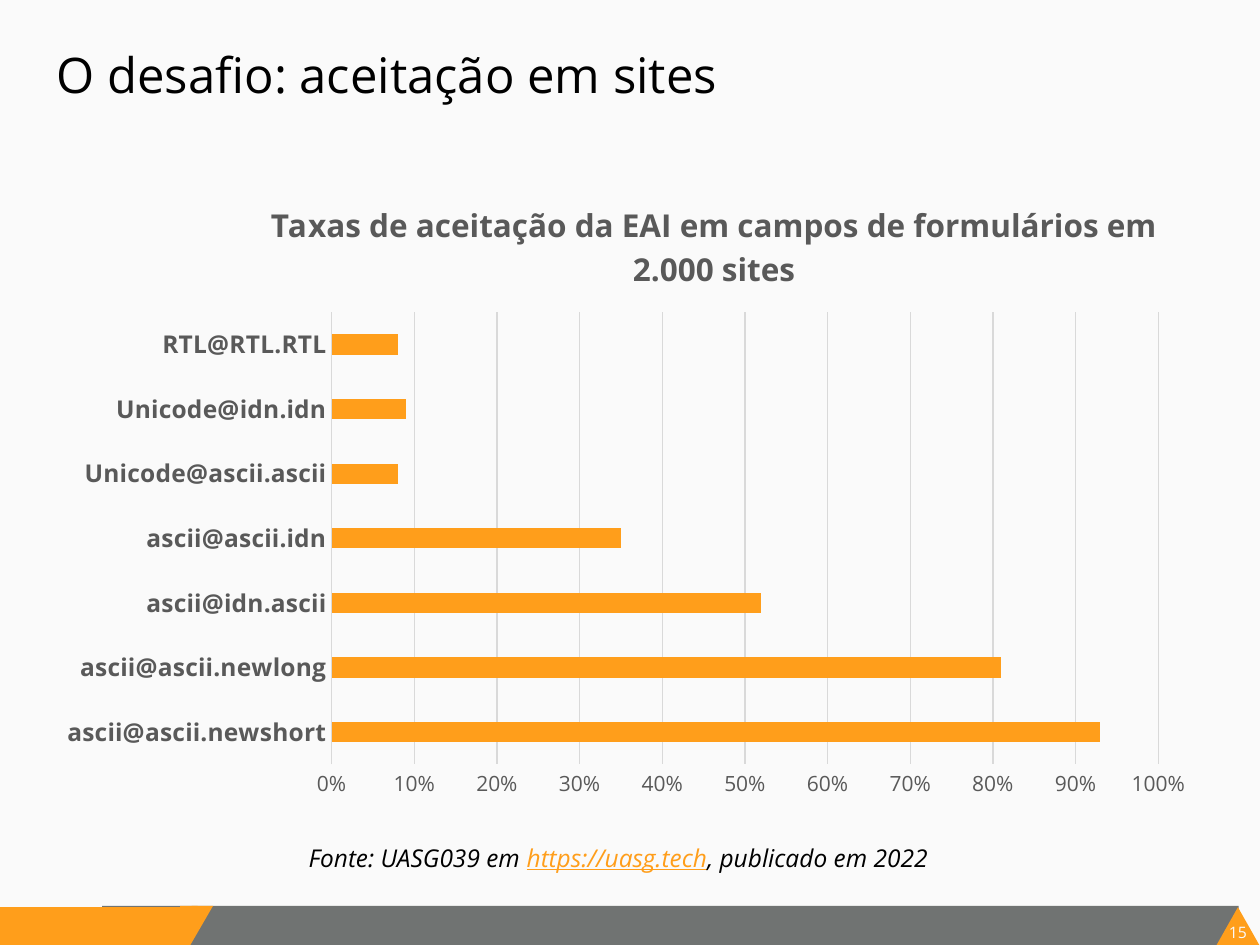
from lxml.etree import SubElement
from pptx import Presentation
from pptx.chart.data import CategoryChartData
from pptx.dml.color import RGBColor
from pptx.enum.chart import XL_CHART_TYPE, XL_TICK_MARK
from pptx.enum.shapes import MSO_SHAPE
from pptx.enum.text import MSO_ANCHOR, PP_ALIGN
from pptx.oxml.ns import qn
from pptx.util import Inches, Pt

FONT = "Open Sans"
ORANGE, GRAY, PALE = "FF9E1B", "707372", "FAFAFA"
BLACK, LABEL, GRID = "000000", "595959", "D9D9D9"

TITLE = "O desafio: aceitação em sites"
CHART_TITLE = "Taxas de aceitação da EAI em campos de formulários em 2.000 sites"
RATES = [
    ("ascii@ascii.newshort", 0.93),
    ("ascii@ascii.newlong", 0.81),
    ("ascii@idn.ascii", 0.52),
    ("ascii@ascii.idn", 0.35),
    ("Unicode@ascii.ascii", 0.08),
    ("Unicode@idn.idn", 0.09),
    ("RTL@RTL.RTL", 0.08),
]
SOURCE = [
    ("Fonte: UASG039 em ", BLACK, False),
    ("https://uasg.tech", ORANGE, True),
    (", publicado em 2022", BLACK, False),
]
FOOTER = [
    (MSO_SHAPE.RECTANGLE, (0.81, 7.19, 9.02, 0.31), GRAY, 0, None),
    (MSO_SHAPE.RECTANGLE, (0, 7.2, 1.5, 0.31), ORANGE, 0, None),
    (MSO_SHAPE.ISOSCELES_TRIANGLE, (9.65, 7.2, 0.35, 0.31), ORANGE, 0, 0.5),
    (MSO_SHAPE.PARALLELOGRAM, (1.34, 7.19, 0.35, 0.31), ORANGE, 180, 0.58),
    (MSO_SHAPE.RECTANGLE, (1.43, 7.19, 0.14, 0.13), ORANGE, 0, None),
]


def color(code):
    return RGBColor.from_string(code)


def place(lengths):
    return [Inches(length) for length in lengths]


def style(font, size, code, bold=False, italic=False):
    font.name, font.size = FONT, Pt(size)
    font.bold, font.italic = bold, italic
    font.color.rgb = color(code)


def add_span(para, text, size, code, **looks):
    span = para.add_run()
    span.text = text
    style(span.font, size, code, **looks)
    return span


def add_text_box(page, lengths, margins=(0.1, 0.05)):
    frame = page.shapes.add_textbox(*place(lengths)).text_frame
    frame.word_wrap = True
    frame.margin_left = frame.margin_right = Inches(margins[0])
    frame.margin_top = frame.margin_bottom = Inches(margins[1])
    return frame.paragraphs[0]


def set_layout(parent, index, **parts):
    for old in parent.findall(qn("c:layout")):
        parent.remove(old)
    layout = SubElement(parent, qn("c:layout"))
    manual = SubElement(layout, qn("c:manualLayout"))
    for name, value in parts.items():
        SubElement(manual, qn("c:" + name)).set("val", str(value))
    parent.insert(index, layout)


def add_footer(page):
    for kind, lengths, fill, rotation, adjustment in FOOTER:
        shape = page.shapes.add_shape(kind, *place(lengths))
        shape.shadow.inherit = False
        shape.fill.solid()
        shape.fill.fore_color.rgb = color(fill)
        shape.line.fill.background()
        shape.rotation = rotation
        if adjustment is not None:
            shape.adjustments[0] = adjustment
    para = add_text_box(page, (9.74, 7.32, 0.17, 0.15), (0, 0))
    para.alignment = PP_ALIGN.CENTER
    add_span(para, "15", 9, PALE)


def add_title(page):
    title = page.shapes.title
    title.left, title.top, title.width, title.height = place((0.35, 0.3, 9.24, 1.25))
    title.text_frame.vertical_anchor = MSO_ANCHOR.TOP
    para = title.text_frame.paragraphs[0]
    para.alignment = PP_ALIGN.LEFT
    add_span(para, TITLE, 28, BLACK)


def add_rates_chart(page):
    data = CategoryChartData(number_format="0%")
    data.categories = [name for name, rate in RATES]
    data.add_series("Series 1", [rate for name, rate in RATES])
    chart = page.shapes.add_chart(
        XL_CHART_TYPE.BAR_CLUSTERED, *place((0.35, 1.39, 9.24, 5.04)), data
    ).chart
    style(chart.font, 10, BLACK)
    chart.has_legend = False

    chart.has_title = True
    para = chart.chart_title.text_frame.paragraphs[0]
    add_span(para, CHART_TITLE, 18, LABEL, bold=True)
    chart.chart_title.include_in_layout = False
    set_layout(chart.chart_title._element, 1, xMode="edge", yMode="edge", x=0.19, y=0.03)

    plot = chart.plots[0]
    plot.gap_width = 219
    plot.vary_by_categories = False
    bars = plot.series[0].format.fill
    bars.solid()
    bars.fore_color.rgb = color(ORANGE)
    set_layout(
        chart._chartSpace.chart.plotArea, 0, layoutTarget="inner",
        xMode="edge", yMode="edge", x=0.247, y=0.216, w=0.71, h=0.712,
    )

    names, values = chart.category_axis, chart.value_axis
    for axis, size, bold in ((names, 14, True), (values, 12, False)):
        axis.major_tick_mark = axis.minor_tick_mark = XL_TICK_MARK.NONE
        style(axis.tick_labels.font, size, LABEL, bold=bold)
    values.minimum_scale, values.maximum_scale, values.major_unit = 0, 1, 0.1
    values.tick_labels.number_format = "0%"
    values.tick_labels.number_format_is_linked = False
    values.format.line.fill.background()
    values.has_major_gridlines = True
    for line in (names.format.line, values.major_gridlines.format.line):
        line.color.rgb = color(GRID)
        line.width = Pt(0.75)


def add_source(page):
    para = add_text_box(page, (2.35, 6.64, 7.35, 0.34))
    for text, code, underline in SOURCE:
        span = add_span(para, text, 14, code, italic=True)
        span.font.underline = underline


def main():
    deck = Presentation()
    deck.slide_width, deck.slide_height = Inches(10), Inches(7.5)
    page = deck.slides.add_slide(deck.slide_layouts[5])
    page.background.fill.solid()
    page.background.fill.fore_color.rgb = color(PALE)
    add_footer(page)
    add_title(page)
    add_rates_chart(page)
    add_source(page)
    deck.save("out.pptx")


if __name__ == "__main__":
    main()
